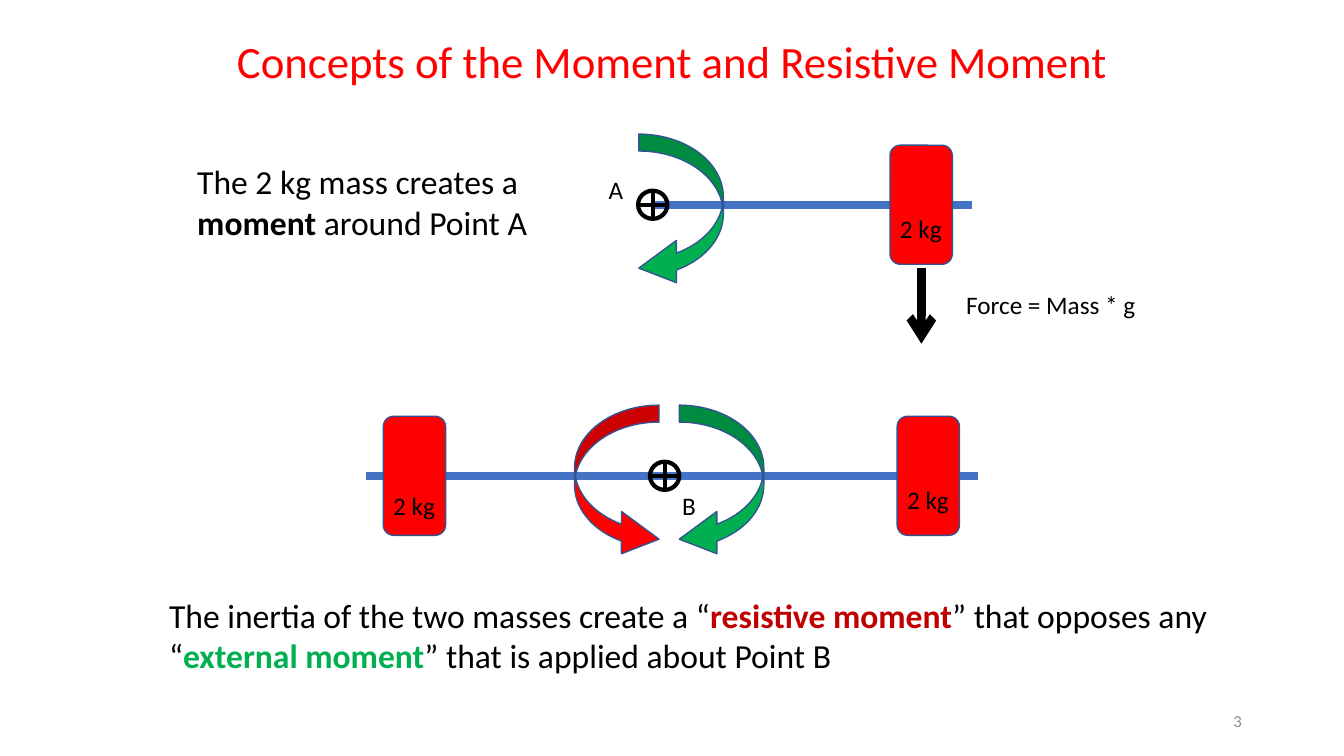
from lxml import etree
from pptx import Presentation
from pptx import util as u
from pptx.dml.color import RGBColor
from pptx.enum import shapes, text
from pptx.oxml.ns import qn

COLORS = {
    "black": "000000", "red": "FF0000", "dark_red": "C00000", "green": "00B050",
    "beam": "4472C4", "outline": "325491", "gray": "8C8C8C",
}
FONT = "Calibri"
MASS_WIDTH, MASS_HEIGHT = 1.57, 3.0
PIVOT_WIDTH, PIVOT_HEIGHT = 0.74, 0.71
TURN_WIDTH, TURN_HEIGHT = 2.13, 3.91


class MomentSlide:
    """Draws on one slide; all positions and sizes are in centimetres."""

    def __init__(self, presentation):
        self.slide = presentation.slides.add_slide(presentation.slide_layouts[6])

    def color(self, name):
        return RGBColor.from_string(COLORS[name])

    def text(self, left, top, width, height, runs, size=18, wrap=True,
             align=text.PP_ALIGN.LEFT, anchor=text.MSO_ANCHOR.TOP, spacing=None):
        """Each run is (words, color name, bold)."""
        box = self.slide.shapes.add_textbox(u.Cm(left), u.Cm(top), u.Cm(width), u.Cm(height))
        frame = box.text_frame
        frame.word_wrap = wrap
        frame.vertical_anchor = anchor
        paragraph = frame.paragraphs[0]
        paragraph.alignment = align
        if spacing:
            paragraph.line_spacing = spacing
        for words, color, bold in runs:
            run = paragraph.add_run()
            run.text = words
            run.font.name = FONT
            run.font.size = u.Pt(size)
            run.font.bold = bold
            run.font.color.rgb = self.color(color)

    def label(self, left, top, width, words):
        self.text(left, top, width, 1.02, [(words, "black", False)], wrap=False)

    def shape(self, kind, left, top, width, height, fill=None, line="outline", weight=1):
        shape = self.slide.shapes.add_shape(
            kind, u.Cm(left), u.Cm(top), u.Cm(width), u.Cm(height))
        shape.shadow.inherit = False
        if fill:
            shape.fill.solid()
            shape.fill.fore_color.rgb = self.color(fill)
        else:
            shape.fill.background()
        shape.line.color.rgb = self.color(line)
        shape.line.width = u.Pt(weight)
        return shape

    def line(self, x1, y1, x2, y2, color, arrow=False):
        connector = self.slide.shapes.add_connector(
            shapes.MSO_CONNECTOR.STRAIGHT, u.Cm(x1), u.Cm(y1), u.Cm(x2), u.Cm(y2))
        connector.line.color.rgb = self.color(color)
        connector.line.width = u.Pt(6)
        properties = connector._element.spPr
        if arrow:
            etree.SubElement(properties.find(qn("a:ln")), qn("a:tailEnd"), type="arrow")
        etree.SubElement(properties, qn("a:effectLst"))

    def mass(self, left, beam_y, label_drop):
        self.shape(shapes.MSO_SHAPE.ROUNDED_RECTANGLE, left, beam_y - MASS_HEIGHT / 2,
                   MASS_WIDTH, MASS_HEIGHT, "red")
        self.label(left, beam_y + label_drop, MASS_WIDTH, "2 kg")

    def pivot(self, center_x, beam_y):
        self.shape(shapes.MSO_SHAPE.FLOWCHART_OR, center_x - PIVOT_WIDTH / 2,
                   beam_y - PIVOT_HEIGHT / 2, PIVOT_WIDTH, PIVOT_HEIGHT,
                   line="black", weight=3)

    def turn(self, left, beam_y, color, mirrored=False):
        """Curved arrow showing a moment around the pivot."""
        arrow = self.shape(shapes.MSO_SHAPE.CURVED_LEFT_ARROW, left, beam_y - 1.78,
                           TURN_WIDTH, TURN_HEIGHT, color)
        for index, value in enumerate((0.2, 0.5, 0.445)):
            arrow.adjustments[index] = value
        if mirrored:
            arrow._element.spPr.find(qn("a:xfrm")).set("flipH", "1")


def main():
    presentation = Presentation()
    presentation.slide_width = u.Cm(33.87)
    presentation.slide_height = u.Cm(19.05)
    slide = MomentSlide(presentation)

    slide.text(5.51, 0.58, 22.86, 2.06,
               [("Concepts of the Moment and Resistive Moment", "red", False)],
               size=32, align=text.PP_ALIGN.CENTER, anchor=text.MSO_ANCHOR.MIDDLE,
               spacing=0.9)

    # Moment around point A
    beam_a = 5.16
    slide.line(16.43, beam_a, 24.49, beam_a, "beam")
    slide.mass(22.43, beam_a, 0.08)
    slide.pivot(16.45, beam_a)
    slide.turn(16.1, beam_a, "green")
    slide.label(15.09, 4.27, 1.09, "A")
    slide.line(23.22, 6.76, 23.22, 8.66, "black", arrow=True)
    slide.label(24.1, 7.16, 6.22, "Force = Mass * g")
    slide.text(4.72, 3.94, 9.3, 2.31, [
        ("The 2 kg mass creates a ", "black", False),
        ("moment", "black", True),
        (" around Point A", "black", False),
    ], size=24)

    # Opposing moments around point B
    beam_b = 11.99
    slide.line(9.22, beam_b, 24.64, beam_b, "beam")
    for left, label_drop in ((9.66, 0.23), (22.61, 0.08)):
        slide.mass(left, beam_b, label_drop)
    slide.pivot(16.75, beam_b)
    slide.label(16.94, 12.22, 1.3, "B")
    slide.turn(17.12, beam_b, "green")
    slide.turn(14.48, beam_b, "red", mirrored=True)
    slide.text(4.01, 14.86, 27.53, 2.31, [
        ("The inertia of the two masses create a “", "black", False),
        ("resistive moment", "dark_red", True),
        ("” that opposes any “", "black", False),
        ("external moment", "green", True),
        ("” that is applied about Point B", "black", False),
    ], size=24)

    slide.text(23.93, 17.65, 7.62, 1.02, [("3", "gray", False)], size=12,
               align=text.PP_ALIGN.RIGHT, anchor=text.MSO_ANCHOR.MIDDLE)
    presentation.save("out.pptx")


if __name__ == "__main__":
    main()
